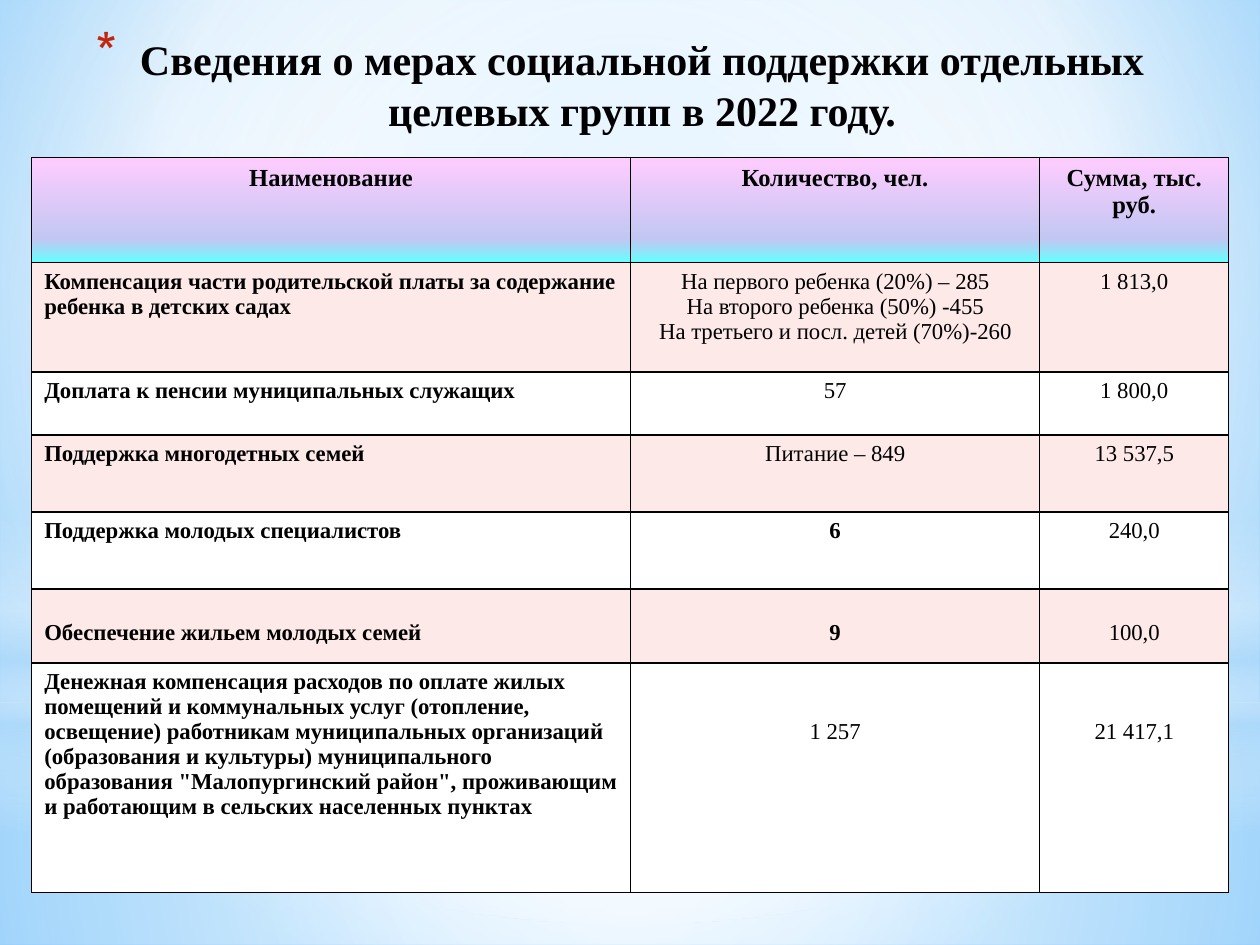
from collections import namedtuple
from dataclasses import dataclass

from lxml import etree
from pptx import Presentation
from pptx import util as u
from pptx.dml.color import RGBColor
from pptx.enum import shapes, text
from pptx.oxml import parse_xml
from pptx.oxml.ns import nsdecls, qn

Box = namedtuple("Box", "left top width height")
Row = namedtuple("Row", "height name people amount bold_people lines_above",
                 defaults=(False, (0, 0, 0)))


@dataclass(frozen=True)
class Theme:
    font: str = "Times New Roman"
    ink: str = "000000"
    bullet: str = "C3260C"
    bands: tuple = ("FCE9E8", "FFFFFF")
    header: tuple = ((0, "FFCCFF"), (78, "C1C7F2"), (100, "66FFFF"))
    sky: tuple = ((0, "9ED5FF"), (60, "FFFFFF"), (100, "5BB9FF"))
    title_size: int = 24
    header_size: int = 14
    body_size: int = 13


THEME = Theme()
CENTRE = (50, 50, 50, 50)
WHITE, HAZE = "FFFFFF", "B4DCFA"
TITLE = "Сведения о мерах социальной поддержки отдельных целевых групп в 2022 году."
HEADINGS = ("Наименование", "Количество, чел.", "Сумма, тыс. руб.")
COLUMNS = (12.07, 8.25, 3.81)
HEADER_HEIGHT, LINE, MARGIN = 2.11, 0.5, 0.13
ROWS = (
    Row(2.21, "Компенсация части родительской платы за содержание ребенка в детских садах",
        "На первого ребенка (20%) – 285\nНа второго ребенка (50%) -455\n"
        "На третьего и посл. детей (70%)-260", "1 813,0"),
    Row(1.27, "Доплата к пенсии муниципальных служащих", "57", "1 800,0"),
    Row(1.55, "Поддержка многодетных семей", "Питание – 849", "13 537,5"),
    Row(1.55, "Поддержка молодых специалистов", "6", "240,0", True),
    Row(1.5, "Обеспечение жильем молодых семей", "9", "100,0", True, (1, 1, 1)),
    Row(4.62, "Денежная компенсация расходов по оплате жилых помещений и коммунальных "
        "услуг (отопление, освещение) работникам муниципальных организаций "
        "(образования и культуры) муниципального образования \"Малопургинский район\", "
        "проживающим и работающим в сельских населенных пунктах",
        "1 257", "21 417,1", False, (0, 2, 2)),
)


def set_gradient(fill, owner, stops, focus=None):
    """Fill with (position, colour[, opacity]) stops: radial with a focus, else downward."""
    fill.solid()
    marks = "".join(
        f'<a:gs pos="{stop[0] * 1000}"><a:srgbClr val="{stop[1]}">'
        f'<a:alpha val="{(stop[2] if len(stop) > 2 else 100) * 1000}"/></a:srgbClr></a:gs>'
        for stop in stops)
    if focus:
        sides = " ".join(f'{side}="{value * 1000}"' for side, value in zip("ltrb", focus))
        shade = f'<a:path path="circle"><a:fillToRect {sides}/></a:path>'
    else:
        shade = '<a:lin ang="5400000" scaled="0"/>'
    solid = next(owner.iter(qn("a:solidFill")))
    solid.getparent().replace(solid, parse_xml(
        f'<a:gradFill {nsdecls("a")} rotWithShape="1"><a:gsLst>{marks}</a:gsLst>{shade}</a:gradFill>'))


def style_text(para, size, bold, align):
    para.alignment = align
    for span in para.runs:
        span.font.name = THEME.font
        span.font.size = u.Pt(size)
        span.font.bold = bold
        span.font.color.rgb = RGBColor.from_string(THEME.ink)


def draw_backdrop(page, box):
    set_gradient(page.background.fill, page.element, THEME.sky, (20, 10, 20, 60))
    oval, rect = shapes.MSO_SHAPE.OVAL, shapes.MSO_SHAPE.RECTANGLE
    # Shape, top, height, stops, focus
    layers = (
        (rect, 14.17, 4.88, ((0, WHITE, 91), (37, WHITE, 76), (100, HAZE, 79)), CENTRE),
        (rect, 0, 14.17, ((0, WHITE, 89), (48, WHITE, 62), (100, HAZE, 79)), CENTRE),
        (rect, 10.46, 6.35, ((0, WHITE, 0), (29, WHITE, 30), (45, HAZE, 40),
                             (55, WHITE, 26), (65, HAZE, 60), (100, WHITE, 0)), None),
        (oval, 4.45, 14.17, ((0, WHITE), (56, WHITE, 0)), CENTRE),
    )
    for kind, top, height, stops, focus in layers:
        layer = page.shapes.add_shape(kind, u.Cm(box.left), u.Cm(box.top + top),
                                      u.Cm(box.width), u.Cm(height))
        layer.shadow.inherit = False
        layer.line.fill.background()
        set_gradient(layer.fill, layer.element.spPr, stops, focus)


def draw_title(page, box):
    title = page.shapes.title
    title.element.getparent().append(title.element)  # above the backdrop
    title.left, title.top, title.width, title.height = map(u.Cm, box)
    frame = title.text_frame
    frame.text = TITLE
    frame.word_wrap = True
    frame.auto_size = text.MSO_AUTO_SIZE.NONE
    frame.vertical_anchor = text.MSO_ANCHOR.MIDDLE
    para = frame.paragraphs[0]
    style_text(para, THEME.title_size, True, text.PP_ALIGN.CENTER)
    # Hanging asterisk bullet
    props = para._p.get_or_add_pPr()
    props.set("marL", str(u.Cm(0.89)))
    props.set("indent", str(-u.Cm(0.89)))
    colour = etree.SubElement(props, qn("a:buClr"))
    etree.SubElement(colour, qn("a:srgbClr"), val=THEME.bullet)
    etree.SubElement(props, qn("a:buSzPct"), val="128000")
    etree.SubElement(props, qn("a:buChar"), char="*")


def add_borders(cell):
    props = cell._tc.get_or_add_tcPr()
    for index, side in enumerate("LRTB"):
        props.insert(index, parse_xml(
            f'<a:ln{side} {nsdecls("a")} w="{u.Pt(1)}"><a:solidFill>'
            f'<a:srgbClr val="{THEME.ink}"/></a:solidFill></a:ln{side}>'))


def fill_cell(cell, words, size, bold, align, lines_above=0):
    cell.text_frame.text = words
    cell.margin_top = u.Cm(MARGIN + lines_above * LINE)
    for para in cell.text_frame.paragraphs:
        style_text(para, size, bold, align)
    add_borders(cell)


def draw_table(page, box):
    frame = page.shapes.add_table(len(ROWS) + 1, len(COLUMNS), *map(u.Cm, box))
    table = frame.table
    table.first_row = table.horz_banding = False
    for column, width in zip(table.columns, COLUMNS):
        column.width = u.Cm(width)
    for line, height in zip(table.rows, (HEADER_HEIGHT, *(row.height for row in ROWS))):
        line.height = u.Cm(height)
    # Header
    for column, heading in enumerate(HEADINGS):
        cell = table.cell(0, column)
        set_gradient(cell.fill, cell._tc, THEME.header)
        fill_cell(cell, heading, THEME.header_size, True, text.PP_ALIGN.CENTER)
    # Body
    aligns = (text.PP_ALIGN.LEFT, text.PP_ALIGN.CENTER, text.PP_ALIGN.CENTER)
    for index, row in enumerate(ROWS):
        words = (row.name, row.people, row.amount)
        bolds = (True, row.bold_people, False)
        for column, parts in enumerate(zip(words, bolds, aligns, row.lines_above)):
            cell = table.cell(index + 1, column)
            cell.fill.solid()
            cell.fill.fore_color.rgb = RGBColor.from_string(THEME.bands[index % 2])
            fill_cell(cell, parts[0], THEME.body_size, *parts[1:])


def main():
    deck = Presentation()
    deck.slide_width, deck.slide_height = u.Cm(25.4), u.Cm(19.05)
    page = deck.slides.add_slide(deck.slide_layouts[5])
    draw_backdrop(page, Box(0, 0, 25.4, 19.05))
    draw_title(page, Box(1.07, 0.43, 22.86, 2.54))
    draw_table(page, Box(0.64, 3.18, 24.13, 14.81))
    deck.save("out.pptx")


if __name__ == "__main__":
    main()
